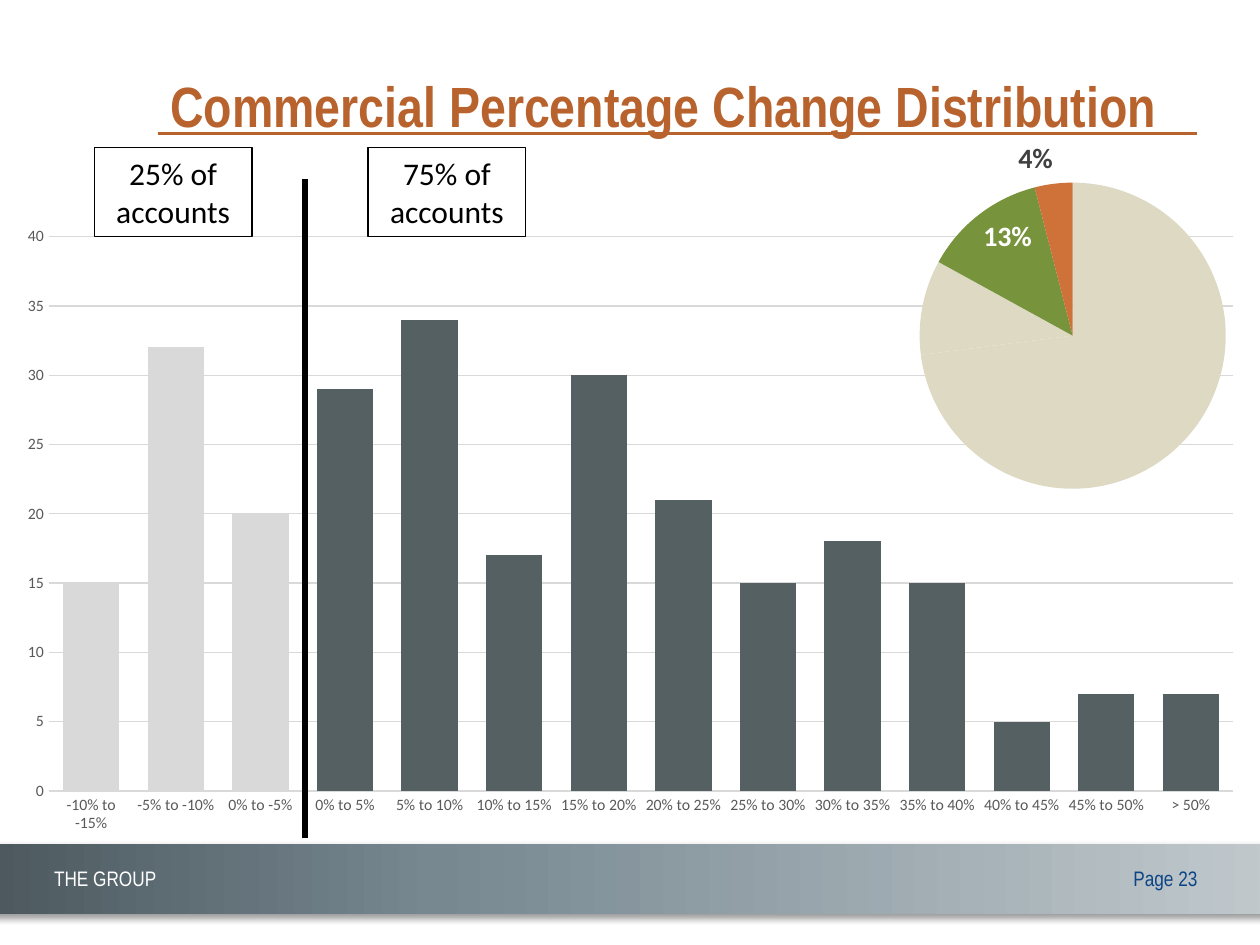
from lxml import etree
from pptx import Presentation
from pptx.chart.data import CategoryChartData
from pptx.dml.color import RGBColor
from pptx.enum.chart import XL_CHART_TYPE, XL_LABEL_POSITION, XL_TICK_MARK
from pptx.enum.shapes import MSO_CONNECTOR, MSO_SHAPE
from pptx.enum.text import MSO_ANCHOR, PP_ALIGN
from pptx.oxml import parse_xml
from pptx.oxml.ns import nsdecls, qn
from pptx.util import Cm, Pt

COLUMN, PIE = XL_CHART_TYPE.COLUMN_CLUSTERED, XL_CHART_TYPE.PIE
INSIDE_END, OUTSIDE_END = XL_LABEL_POSITION.INSIDE_END, XL_LABEL_POSITION.OUTSIDE_END
NO_TICK = XL_TICK_MARK.NONE
STRAIGHT, RECTANGLE = MSO_CONNECTOR.STRAIGHT, MSO_SHAPE.RECTANGLE
MIDDLE = MSO_ANCHOR.MIDDLE
LEFT, CENTER, RIGHT = PP_ALIGN.LEFT, PP_ALIGN.CENTER, PP_ALIGN.RIGHT

COLORS = {
    "accent": "B8632E", "black": "000000", "white": "FFFFFF", "page": "0B4585",
    "bar": "556063", "decrease": "D9D9D9", "grid": "D9D9D9", "axis": "595959",
    "sand": "DDD9C3", "green": "77933C", "orange": "CE723A", "label": "404040",
    "band_dark": "4B575D", "band_mid": "778891", "band_light": "C1C9CD",
}
BODY_FONT, HEADING_FONT = "Calibri", "Arial Narrow"
BAR_VALUES = {
    "-10% to -15%": 15, "-5% to -10%": 32, "0% to -5%": 20, "0% to 5%": 29,
    "5% to 10%": 34, "10% to 15%": 17, "15% to 20%": 30, "20% to 25%": 21,
    "25% to 30%": 15, "30% to 35%": 18, "35% to 40%": 15, "40% to 45%": 5,
    "45% to 50%": 7, "> 50%": 7,
}
DECREASE_COUNT = 3
PIE_SLICES = [(0.73, "sand"), (0.1, "sand"), (0.13, "green"), (0.04, "orange")]


def color(name):
    return RGBColor.from_string(COLORS[name])


def style_font(font, name, size, color_name, bold=False):
    font.name, font.size, font.bold = name, Pt(size), bold
    font.color.rgb = color(color_name)


def write_text(frame, text, align, name, size, color_name, bold=False):
    frame.word_wrap = True
    frame.vertical_anchor = MIDDLE
    paragraph = frame.paragraphs[0]
    paragraph.alignment = align
    run = paragraph.add_run()
    run.text = text
    style_font(run.font, name, size, color_name, bold)


def add_line(slide, x1, y1, x2, y2, color_name, width):
    line = slide.shapes.add_connector(STRAIGHT, Cm(x1), Cm(y1), Cm(x2), Cm(y2))
    line.line.color.rgb = color(color_name)
    line.line.width = Pt(width)
    etree.SubElement(line._element.spPr, qn("a:effectLst"))


def add_title(slide, left, top, width, height):
    title = slide.shapes.title
    title.left, title.top, title.width, title.height = map(Cm, (left, top, width, height))
    write_text(title.text_frame, "Commercial Percentage Change Distribution",
               LEFT, HEADING_FONT, 32.4, "accent", True)
    rule_top = top + 1.85
    add_line(slide, left, rule_top, left + width, rule_top, "accent", 1.5)


def add_footer(slide, left, top, width, height):
    band = slide.shapes.add_shape(RECTANGLE, Cm(left), Cm(top), Cm(width), Cm(height))
    band.line.fill.background()
    band.fill.gradient()
    band.fill.gradient_angle = 0
    properties = band._element.spPr
    stops = properties.find(qn("a:gradFill")).find(qn("a:gsLst"))
    for stop in list(stops):
        stops.remove(stop)
    for position, name in ((0, "band_dark"), (35, "band_mid"), (100, "band_light")):
        stops.append(parse_xml(
            f'<a:gs {nsdecls("a")} pos="{position * 1000}">'
            f'<a:srgbClr val="{COLORS[name]}"/></a:gs>'))
    properties.append(parse_xml(
        f'<a:effectLst {nsdecls("a")}><a:outerShdw blurRad="{Pt(4)}" dist="{Pt(3)}" '
        f'dir="2700000" rotWithShape="0"><a:srgbClr val="{COLORS["black"]}">'
        '<a:alpha val="40000"/></a:srgbClr></a:outerShdw></a:effectLst>'))
    labels = (("THE GROUP", 1.27, 3.61, LEFT, "white"),
              ("Page 23", 22.86, 1.96, RIGHT, "page"))
    for text, offset, label_width, align, color_name in labels:
        box = slide.shapes.add_textbox(
            Cm(left + offset), Cm(top + 0.3), Cm(label_width), Cm(0.76))
        write_text(box.text_frame, text, align, HEADING_FONT, 12, color_name)


def add_chart(slide, kind, box, categories, values, number_format, plot_box):
    data = CategoryChartData(number_format=number_format)
    data.categories = categories
    data.add_series("Series 1", values)
    chart = slide.shapes.add_chart(kind, *map(Cm, box), data).chart
    chart.has_legend = chart.has_title = False
    style_font(chart.font, BODY_FONT, 10, "black")
    plot_area = chart._chartSpace.chart.plotArea
    for layout in plot_area.findall(qn("c:layout")):
        plot_area.remove(layout)
    edges = "".join(f'<c:{tag} val="{value}"/>' for tag, value in zip("xywh", plot_box))
    plot_area.insert(0, parse_xml(
        f'<c:layout {nsdecls("c")}><c:manualLayout><c:layoutTarget val="inner"/>'
        f'<c:xMode val="edge"/><c:yMode val="edge"/>{edges}</c:manualLayout></c:layout>'))
    return chart


def fill_point(series, index, color_name):
    fill = series.points[index].format.fill
    fill.solid()
    fill.fore_color.rgb = color(color_name)


def add_distribution(slide, *box):
    chart = add_chart(slide, COLUMN, box, list(BAR_VALUES), list(BAR_VALUES.values()),
                      "General", (0.04, 0.03, 0.94, 0.88))
    plot = chart.plots[0]
    plot.vary_by_categories = False
    plot.gap_width, plot.overlap = 50, -27
    series = plot.series[0]
    series.format.fill.solid()
    series.format.fill.fore_color.rgb = color("bar")
    for index in range(DECREASE_COUNT):
        fill_point(series, index, "decrease")
    category_axis, value_axis = chart.category_axis, chart.value_axis
    for axis in (category_axis, value_axis):
        axis.major_tick_mark = axis.minor_tick_mark = NO_TICK
        style_font(axis.tick_labels.font, BODY_FONT, 9, "axis")
    value_axis.minimum_scale, value_axis.maximum_scale, value_axis.major_unit = 0, 40, 5
    value_axis.format.line.fill.background()
    for line in (category_axis.format.line, value_axis.major_gridlines.format.line):
        line.color.rgb = color("grid")
        line.width = Pt(0.75)


def add_share_pie(slide, *box):
    values = [value for value, _ in PIE_SLICES]
    chart = add_chart(slide, PIE, box, ["1", "2", "3", "4"], values,
                      "0%", (0.13, 0.15, 0.81, 0.81))
    chart.plots[0].vary_by_categories = True
    series = chart.plots[0].series[0]
    for index, (_, color_name) in enumerate(PIE_SLICES):
        fill_point(series, index, color_name)
    series.data_labels.show_value = False
    for index, place, color_name in ((2, INSIDE_END, "white"), (3, OUTSIDE_END, "label")):
        label = series.points[index].data_label
        style_font(label.font, BODY_FONT, 16, color_name, True)
        label.position = place


def add_account_split(slide, left, top, width, height):
    divider = left + 4.25
    add_line(slide, divider, top + 0.64, divider, top + height, "black", 3)
    for text, box_left in (("25% of accounts", left), ("75% of accounts", left + width - 3.18)):
        box = slide.shapes.add_shape(RECTANGLE, Cm(box_left), Cm(top), Cm(3.18), Cm(1.8))
        box.shadow.inherit = False
        box.fill.solid()
        box.fill.fore_color.rgb = color("white")
        box.line.color.rgb = color("black")
        box.line.width = Pt(0.75)
        write_text(box.text_frame, text, CENTER, BODY_FONT, 18, "black")


def main():
    presentation = Presentation()
    presentation.slide_width, presentation.slide_height = Cm(25.4), Cm(19.05)
    slide = presentation.slides.add_slide(presentation.slide_layouts[5])
    add_footer(slide, -0.43, 17.02, 26.24, 1.4)
    add_distribution(slide, -0.03, 4.39, 25.4, 12.7)
    add_title(slide, 3.18, 0.84, 20.96, 2.54)
    add_account_split(slide, 1.9, 2.97, 8.7, 13.92)
    add_share_pie(slide, 17.55, 2.54, 7.62, 7.62)
    presentation.save("out.pptx")


if __name__ == "__main__":
    main()
